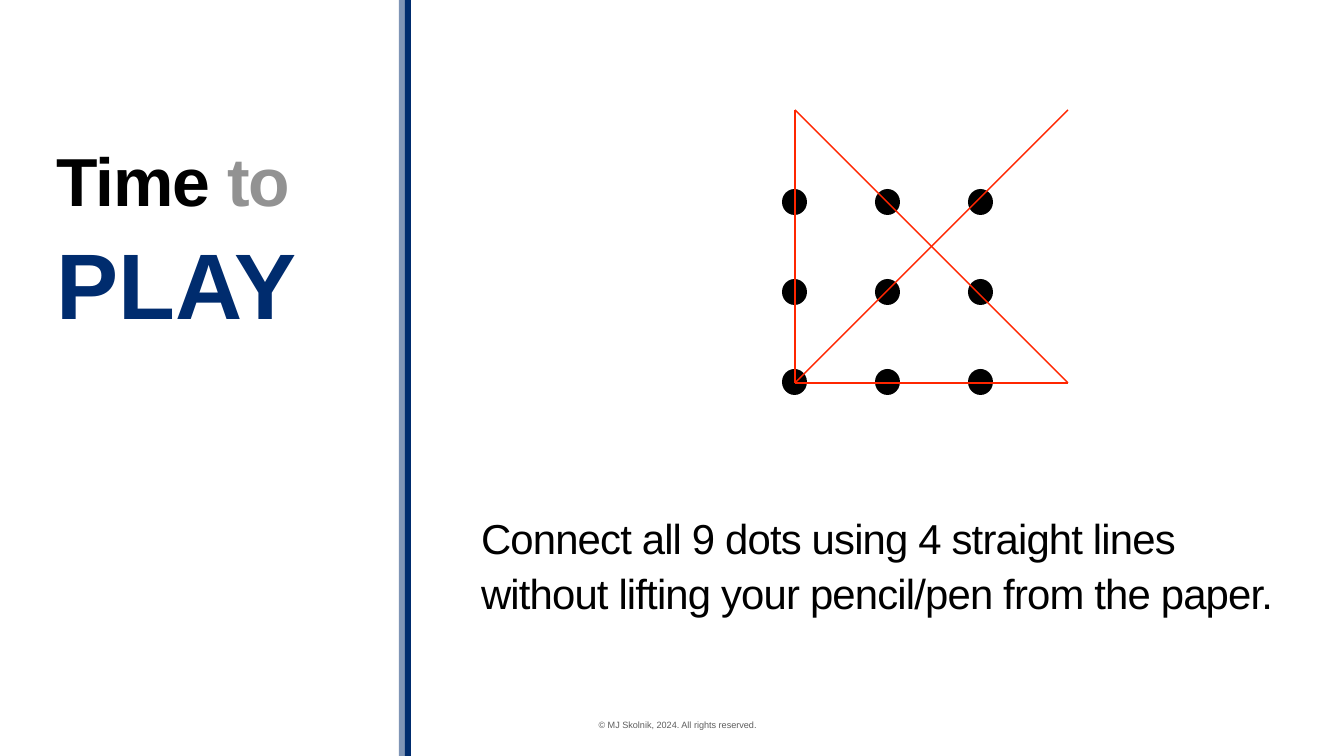
"""Builds the nine dots puzzle slide."""
import pptx
import pptx.util
import pptx.dml.color
import pptx.enum.shapes
import pptx.enum.text
import pptx.oxml
from lxml import etree

Color = pptx.dml.color.RGBColor
Pt = pptx.util.Pt
Shape = pptx.enum.shapes.MSO_SHAPE
Anchor = pptx.enum.text.MSO_ANCHOR
Align = pptx.enum.text.PP_ALIGN

BLACK = Color(0, 0, 0)
NAVY = Color(0x00, 0x2C, 0x6E)
GRAY = Color(0x92, 0x92, 0x92)
SLATE = Color(0x5E, 0x5E, 0x5E)
RED = Color(0xFF, 0x26, 0x00)

SIZE = (1344, 756)
BARS = [(405, 100), (399, 50)]
BAR = 6
DOTS = {"left": 782, "top": 189, "dx": 93, "dy": 90, "size": (25, 26)}
ROUTE = [(1068, 110), (795, 383), (795, 110), (1068, 383), (795, 383)]

TEXTS = [
    {"box": (54, 129, 329, 94), "runs": [("Time ", BLACK), ("to", GRAY)],
     "size": 97, "bold": True, "track": -190, "line": 0.8,
     "anchor": Anchor.BOTTOM},
    {"box": (54, 223, 331, 181), "runs": [("PLAY", NAVY)],
     "size": 133, "bold": True},
    {"box": (478, 487, 815, 151),
     "runs": [("Connect all 9 dots using 4 straight lines without lifting "
               "your pencil/pen from the paper.", BLACK)],
     "size": 59.8, "track": -120, "line": 1.1, "before": 40,
     "anchor": Anchor.MIDDLE},
    {"box": (594, 717, 167, 16),
     "runs": [("© MJ Skolnik, 2024. All rights reserved.", SLATE)],
     "size": 13, "anchor": Anchor.MIDDLE, "align": Align.CENTER,
     "wrap": False},
]


def px(*vals):
    return [round(v * 914400 / 50.4) for v in vals]


def add_solid(slide, kind, box, color, alpha=100):
    shape = slide.shapes.add_shape(kind, *px(*box))
    shape.shadow.inherit = False
    shape.fill.solid()
    shape.fill.fore_color.rgb = color
    shape.line.fill.background()
    if alpha < 100:
        tone = shape._element.spPr.find(".//" + pptx.oxml.ns.qn("a:srgbClr"))
        etree.SubElement(tone, pptx.oxml.ns.qn("a:alpha"),
                         val=str(alpha * 1000))


def add_line(slide, start, end):
    line = slide.shapes.add_connector(
        pptx.enum.shapes.MSO_CONNECTOR.STRAIGHT, *px(*start, *end))
    line.line.color.rgb = RED
    line.line.width = Pt(2)
    etree.SubElement(line._element.spPr, pptx.oxml.ns.qn("a:effectLst"))


def add_text(slide, item):
    frame = slide.shapes.add_textbox(*px(*item["box"])).text_frame
    frame.word_wrap = item.get("wrap", True)
    frame.vertical_anchor = item.get("anchor", Anchor.TOP)
    frame.margin_left = frame.margin_right = px(3)[0]
    frame.margin_top = frame.margin_bottom = px(3)[0]
    para = frame.paragraphs[0]
    para.alignment = item.get("align", Align.LEFT)
    para.line_spacing = item.get("line", 1.0)
    para.space_before = Pt(item.get("before", 0))
    para.font.name = "Arial"
    para.font.size = Pt(item["size"])
    para.font.bold = item.get("bold", False)
    for words, color in item["runs"]:
        run = para.add_run()
        run.text = words
        run.font.color.rgb = color
        if "track" in item:
            run._r.get_or_add_rPr().set("spc", str(item["track"]))


def main():
    deck = pptx.Presentation()
    deck.slide_width, deck.slide_height = px(*SIZE)
    slide = deck.slides.add_slide(deck.slide_layouts[6])
    for left, alpha in BARS:
        add_solid(slide, Shape.RECTANGLE, (left, 0, BAR, SIZE[1]), NAVY, alpha)
    for row in range(3):
        for col in range(3):
            spot = (DOTS["left"] + col * DOTS["dx"],
                    DOTS["top"] + row * DOTS["dy"])
            add_solid(slide, Shape.OVAL, spot + DOTS["size"], BLACK)
    for start, end in zip(ROUTE, ROUTE[1:]):
        add_line(slide, start, end)
    for item in TEXTS:
        add_text(slide, item)
    deck.save("out.pptx")


if __name__ == "__main__":
    main()
